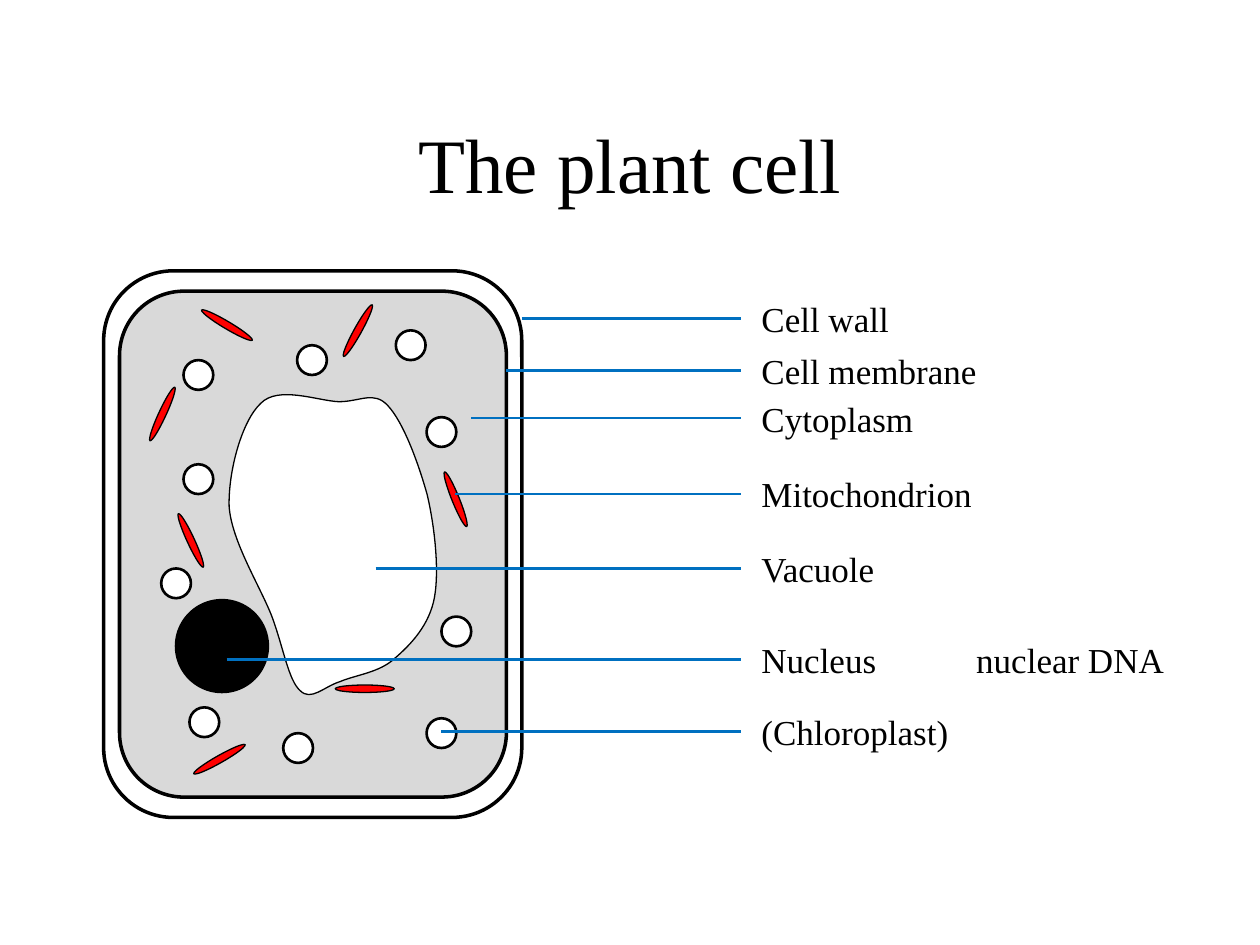
from typing import NamedTuple, Optional

from lxml.etree import SubElement
from pptx import Presentation
from pptx.dml.color import RGBColor
from pptx.enum.shapes import MSO_CONNECTOR, MSO_SHAPE
from pptx.enum.text import MSO_ANCHOR, MSO_AUTO_SIZE, PP_ALIGN
from pptx.oxml.ns import qn
from pptx.util import Cm, Pt

FONT = "Times New Roman"
BLACK, WHITE, GREY, RED, BLUE = "000000", "FFFFFF", "D9D9D9", "FF0000", "0070C0"
CHLOROPLAST_SIZE = 0.6
MITOCHONDRION_SIZE = (1.19, 0.15)
LEADER_END, LABEL_LEFT, LABEL_HEIGHT, LABEL_RISE = 14.93, 15.1, 1.11, 0.55


class Mitochondrion(NamedTuple):
    left: float
    top: float
    rotation: float = 0


class Label(NamedTuple):
    text: str
    leader_start: float
    middle: float
    width: float


CHLOROPLASTS = [
    (3.7, 7.26), (5.71, 14.78), (8.9, 12.43), (3.7, 9.36), (5.99, 6.96),
    (8.6, 8.41), (7.98, 6.66), (3.25, 11.46), (8.6, 14.48), (3.82, 14.26),
]
MITOCHONDRIA = [
    Mitochondrion(3.83, 15.23, 330.5),
    Mitochondrion(2.68, 8.27, 294.8),
    Mitochondrion(3.98, 6.48, 30.7),
    Mitochondrion(6.62, 6.59, 299),
    Mitochondrion(8.59, 9.99, 68),
    Mitochondrion(6.76, 13.81),
    Mitochondrion(3.25, 10.82, 65.2),
]
VACUOLE_BOX = (4.62, 7.95, 8.81, 14)
VACUOLE_START = (6.83, 8.1)
VACUOLE_CURVES = [
    ((6.4, 8.08), (5.61, 7.77), (5.26, 8.13)),
    ((4.88, 8.48), (4.6, 9.5), (4.62, 10.21)),
    ((4.67, 10.92), (5.26, 11.84), (5.49, 12.45)),
    ((5.72, 13.08), (5.82, 13.72), (6.05, 13.92)),
    ((6.27, 14.15), (6.53, 13.84), (6.86, 13.74)),
    ((7.16, 13.61), (7.65, 13.56), (7.95, 13.28)),
    ((8.28, 13), (8.66, 12.6), (8.76, 12.04)),
    ((8.86, 11.48), (8.76, 10.59), (8.61, 9.96)),
    ((8.43, 9.32), (8.13, 8.51), (7.82, 8.18)),
    ((7.54, 7.87), (7.26, 8.1), VACUOLE_START),
]
LABELS = [
    Label("Cell wall", 10.52, 6.42, 3.1),
    Label("Cell membrane", 10.21, 7.47, 4.88),
    Label("Cytoplasm", 9.5, 8.43, 3.61),
    Label("Mitochondrion", 9.17, 9.96, 4.78),
    Label("Vacuole", 7.57, 11.46, 2.82),
    Label("Nucleus", 4.57, 13.29, 2.84),
    Label("(Chloroplast)", 8.89, 14.75, 4.29),
]


def color(value: str) -> RGBColor:
    return RGBColor.from_string(value)


def style(shape, fill: Optional[str], line_width: float) -> None:
    shape.shadow.inherit = False
    if fill:
        shape.fill.solid()
        shape.fill.fore_color.rgb = color(fill)
    else:
        shape.fill.background()
    shape.line.color.rgb = color(BLACK)
    shape.line.width = Pt(line_width)


def add_part(shapes, kind, left: float, top: float, width: float, height: float,
             fill: Optional[str], line_width: float, rotation: float = 0) -> None:
    shape = shapes.add_shape(kind, Cm(left), Cm(top), Cm(width), Cm(height))
    shape.rotation = rotation
    style(shape, fill, line_width)


def add_vacuole(shapes) -> None:
    """Draw the vacuole as a closed outline of cubic curves inside its box."""
    left, top, right, bottom = VACUOLE_BOX
    builder = shapes.build_freeform(Cm(left), Cm(top))
    builder.add_line_segments([(Cm(right), Cm(bottom))], close=True)
    shape = builder.convert_to_shape()
    outline = next(shape.element.iter(qn("a:path")))
    for command in list(outline):
        outline.remove(command)
    commands = [("a:moveTo", [VACUOLE_START])]
    commands += [("a:cubicBezTo", curve) for curve in VACUOLE_CURVES]
    for tag, points in commands:
        command = SubElement(outline, qn(tag))
        for x, y in points:
            SubElement(command, qn("a:pt"), x=str(Cm(x - left)), y=str(Cm(y - top)))
    SubElement(outline, qn("a:close"))
    style(shape, WHITE, 0.75)


def add_text(slide, text: str, *, left: float, top: float, width: float,
             height: float = LABEL_HEIGHT, size: float = 20, wrap: bool = False,
             alignment=PP_ALIGN.LEFT, anchor=MSO_ANCHOR.TOP,
             auto_size=MSO_AUTO_SIZE.SHAPE_TO_FIT_TEXT) -> None:
    frame = slide.shapes.add_textbox(Cm(left), Cm(top), Cm(width), Cm(height)).text_frame
    frame.word_wrap = wrap
    frame.auto_size = auto_size
    frame.vertical_anchor = anchor
    paragraph = frame.paragraphs[0]
    paragraph.text = text
    paragraph.alignment = alignment
    paragraph.font.name = FONT
    paragraph.font.size = Pt(size)
    paragraph.font.color.rgb = color(BLACK)


def add_leader(slide, start: float, middle: float) -> None:
    connector = slide.shapes.add_connector(
        MSO_CONNECTOR.STRAIGHT, Cm(start), Cm(middle), Cm(LEADER_END), Cm(middle))
    connector.line.color.rgb = color(BLUE)
    connector.line.width = Pt(1.5)
    SubElement(connector.element.spPr, qn("a:effectLst"))


def add_cell(slide) -> None:
    shapes = slide.shapes.add_group_shape().shapes
    add_part(shapes, MSO_SHAPE.ROUNDED_RECTANGLE, 2.41, 5.87, 7.8, 10.2, GREY, 2)
    add_part(shapes, MSO_SHAPE.ROUNDED_RECTANGLE, 2.09, 5.46, 8.43, 11.02, None, 2)
    for left, top in CHLOROPLASTS:
        add_part(shapes, MSO_SHAPE.OVAL, left, top, CHLOROPLAST_SIZE, CHLOROPLAST_SIZE,
                 WHITE, 1.5)
    add_part(shapes, MSO_SHAPE.OVAL, 3.55, 12.1, 1.85, 1.85, BLACK, 1.5)
    for item in MITOCHONDRIA:
        add_part(shapes, MSO_SHAPE.OVAL, item.left, item.top, *MITOCHONDRION_SIZE,
                 RED, 0.75, item.rotation)
    add_vacuole(shapes)


def main() -> None:
    presentation = Presentation()
    presentation.slide_width, presentation.slide_height = Cm(25.4), Cm(19.05)
    slide = presentation.slides.add_slide(presentation.slide_layouts[6])
    add_text(slide, "The plant cell", left=1.91, top=1.7, width=21.59, height=3.18,
             size=44, wrap=True, alignment=PP_ALIGN.CENTER, anchor=MSO_ANCHOR.MIDDLE,
             auto_size=MSO_AUTO_SIZE.NONE)
    add_cell(slide)
    for label in LABELS:
        add_leader(slide, label.leader_start, label.middle)
    for label in LABELS:
        add_text(slide, label.text, left=LABEL_LEFT, top=label.middle - LABEL_RISE,
                 width=label.width)
    add_text(slide, "nuclear DNA", left=19.43, top=12.74, width=4.34)
    presentation.save("out.pptx")


if __name__ == "__main__":
    main()
